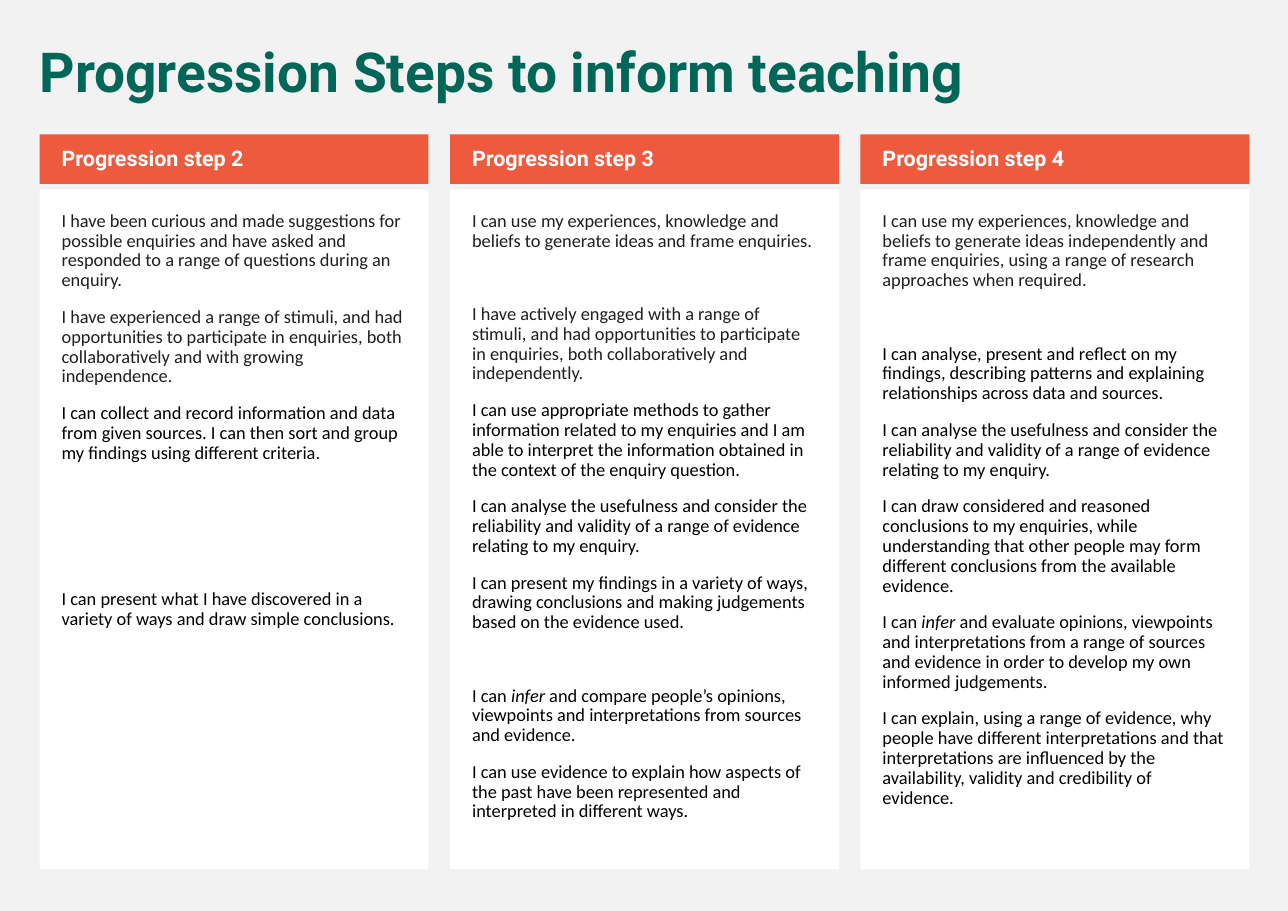
import pptx
import pptx.dml.color
import pptx.enum.shapes
import pptx.enum.text
import pptx.util
from pptx.util import Inches

LEFT, RIGHT = 0.36, 11.34
COLUMN_WIDTH = 3.53
PARAGRAPH_GAP = 11
SKIPPED_LINE = 24  # extra points that move a statement down by one empty row
GREY, BLACK = "1F1F1F", "000000"

# Each statement: text (italics between asterisks), colour, rows skipped above
COLUMNS = [
    ("Progression step 2", [
        ("I have been curious and made suggestions for possible enquiries and have asked "
         "and responded to a range of questions during an enquiry.", GREY, 0),
        ("I have experienced a range of stimuli, and had opportunities to participate in "
         "enquiries, both collaboratively and with growing independence.", GREY, 0),
        ("I can collect and record information and data from given sources. I can then "
         "sort and group my findings using different criteria.", BLACK, 0),
        ("I can present what I have discovered in a variety of ways and draw simple "
         "conclusions.", BLACK, 3),
    ]),
    ("Progression step 3", [
        ("I can use my experiences, knowledge and beliefs to generate ideas and frame "
         "enquiries.", GREY, 0),
        ("I have actively engaged with a range of stimuli, and had opportunities to "
         "participate in enquiries, both collaboratively and independently.", GREY, 1),
        ("I can use appropriate methods to gather information related to my enquiries and "
         "I am able to interpret the information obtained in the context of the enquiry "
         "question.", BLACK, 0),
        ("I can analyse the usefulness and consider the reliability and validity of a "
         "range of evidence relating to my enquiry.", BLACK, 0),
        ("I can present my findings in a variety of ways, drawing conclusions and making "
         "judgements based on the evidence used.", BLACK, 0),
        ("I can *infer* and compare people’s opinions, viewpoints and interpretations "
         "from sources and evidence.", BLACK, 1),
        ("I can use evidence to explain how aspects of the past have been represented and "
         "interpreted in different ways.", BLACK, 0),
    ]),
    ("Progression step 4", [
        ("I can use my experiences, knowledge and beliefs to generate ideas independently "
         "and frame enquiries, using a range of research approaches when required.", GREY, 0),
        ("I can analyse, present and reflect on my findings, describing patterns and "
         "explaining relationships across data and sources.", BLACK, 1),
        ("I can analyse the usefulness and consider the reliability and validity of a "
         "range of evidence relating to my enquiry.", BLACK, 0),
        ("I can draw considered and reasoned conclusions to my enquiries, while "
         "understanding that other people may form different conclusions from the "
         "available evidence.", BLACK, 0),
        ("I can *infer* and evaluate opinions, viewpoints and interpretations from a range "
         "of sources and evidence in order to develop my own informed judgements.", BLACK, 0),
        ("I can explain, using a range of evidence, why people have different "
         "interpretations and that interpretations are influenced by the availability, "
         "validity and credibility of evidence.", BLACK, 0),
    ]),
]


def colour(hex_string):
    return pptx.dml.color.RGBColor.from_string(hex_string)


def format_paragraph(paragraph, font_name, size, hex_string, bold=False):
    paragraph.alignment = pptx.enum.text.PP_ALIGN.LEFT
    paragraph.line_spacing = 0.9
    for run in paragraph.runs:
        run.font.name = font_name
        run.font.size = pptx.util.Pt(size)
        run.font.bold = bold
        run.font.color.rgb = colour(hex_string)


def add_panel(slide, left, top, height, fill, margins):
    """Add a plain rectangle; margins are left, top, right, bottom."""
    panel = slide.shapes.add_shape(
        pptx.enum.shapes.MSO_SHAPE.RECTANGLE,
        Inches(left), Inches(top), Inches(COLUMN_WIDTH), Inches(height))
    panel.shadow.inherit = False
    panel.fill.solid()
    panel.fill.fore_color.rgb = colour(fill)
    panel.line.fill.background()
    frame = panel.text_frame
    frame.word_wrap = True
    (frame.margin_left, frame.margin_top,
     frame.margin_right, frame.margin_bottom) = map(Inches, margins)
    return panel


def add_heading(slide, left, text):
    panel = add_panel(slide, left, 1.22, 0.45, "ED5A3E", (0.2, 0.05, 0.1, 0.05))
    frame = panel.text_frame
    frame.vertical_anchor = pptx.enum.text.MSO_ANCHOR.MIDDLE
    frame.text = text
    format_paragraph(frame.paragraphs[0], "Roboto", 14, "FFFFFF", bold=True)


def add_statements(slide, left, statements):
    panel = add_panel(slide, left, 1.72, 6.17, "FFFFFF", (0.2, 0.2, 0.2, 0.2))
    frame = panel.text_frame
    frame.vertical_anchor = pptx.enum.text.MSO_ANCHOR.TOP
    for index, (text, hex_string, skipped) in enumerate(statements):
        paragraph = frame.add_paragraph() if index else frame.paragraphs[0]
        for part_index, part in enumerate(text.split("*")):
            run = paragraph.add_run()
            run.text = part
            run.font.italic = part_index % 2 == 1
        format_paragraph(paragraph, "Calibri", 12, hex_string)
        paragraph.space_before = pptx.util.Pt(PARAGRAPH_GAP + skipped * SKIPPED_LINE)


def add_title(slide, text):
    box = slide.shapes.add_textbox(Inches(0.26), Inches(0.36), Inches(11.08), Inches(0.65))
    box.text_frame.word_wrap = True
    box.text_frame.text = text
    format_paragraph(box.text_frame.paragraphs[0], "Roboto", 36, "006758", bold=True)


def main():
    presentation = pptx.Presentation()
    presentation.slide_width = Inches(11.69)
    presentation.slide_height = Inches(8.27)
    slide = presentation.slides.add_slide(presentation.slide_layouts[6])
    slide.background.fill.solid()
    slide.background.fill.fore_color.rgb = colour("F2F2F2")

    add_title(slide, "Progression Steps to inform teaching")
    pitch = (RIGHT - LEFT - COLUMN_WIDTH) / (len(COLUMNS) - 1)
    for index, (heading, statements) in enumerate(COLUMNS):
        left = LEFT + index * pitch
        add_statements(slide, left, statements)
        add_heading(slide, left, heading)

    presentation.save("out.pptx")


if __name__ == "__main__":
    main()
